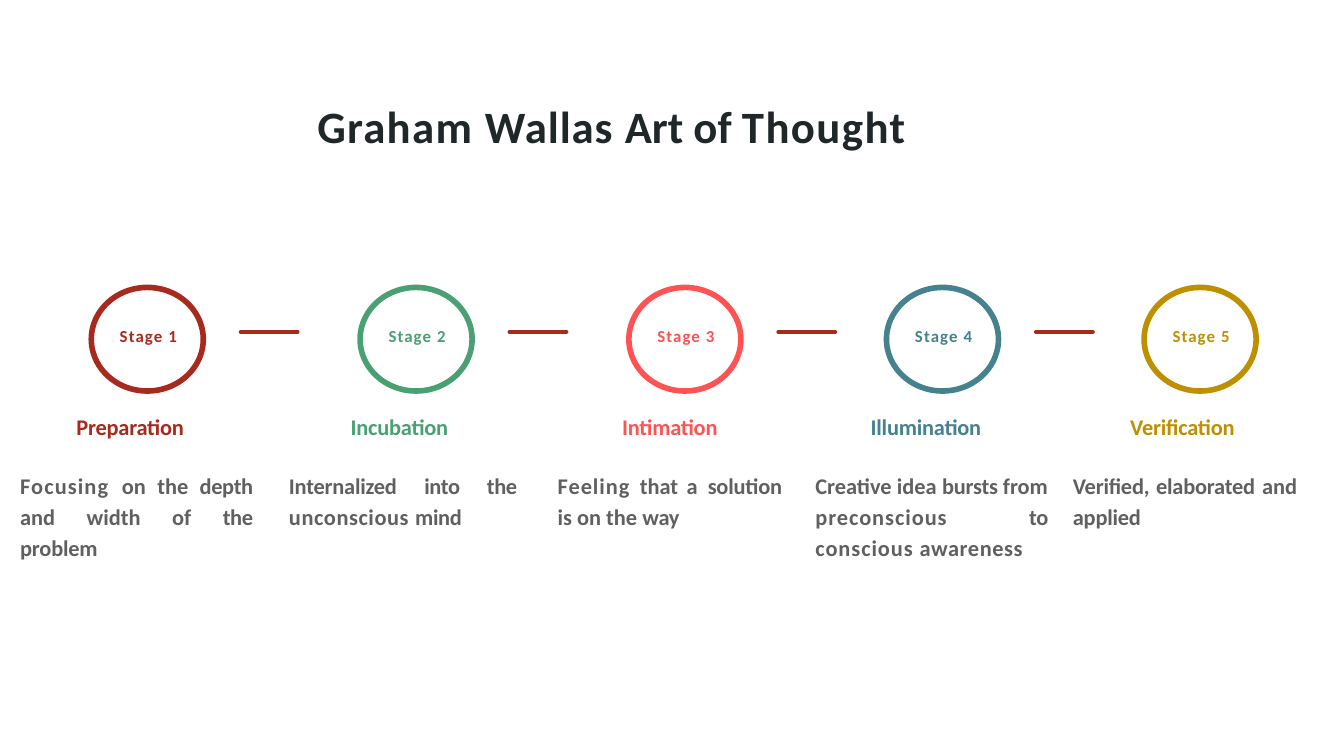
from itertools import accumulate

from lxml.etree import SubElement
from pptx import Presentation
from pptx.dml.color import RGBColor
from pptx.enum.shapes import MSO_CONNECTOR, MSO_SHAPE
from pptx.enum.text import MSO_ANCHOR, PP_ALIGN
from pptx.oxml.ns import qn
from pptx.util import Pt

FONT = "Calibri"
INK, GREY, RED = "1F2729", "606060", "A72A1E"

COLUMN_LEFTS = list(accumulate([9.4, 144, 144, 138, 138]))

# Each text is a list of (wording, letter spacing in points).
TITLE = [("Graham ", 0.7), ("Wallas ", 0.5), ("Art of ", 0), ("Thought", 0.8)]

# Colour, number spacing, name, name offset, description width, description
STAGES = [
    (RED, -0.5, "Preparation", 30.2, 126,
     [("Focusing ", 0.6), ("on the ", 0), ("depth ", -0.2),
      ("and width of ", 0), ("the ", -0.2), ("problem", -0.1)]),
    ("4AA073", 0.4, "Incubation", 33.1, 123.5,
     [("Internalized ", -0.1), ("into the ", -0.2),
      ("unconscious ", 0.3), ("mind", -0.2)]),
    ("FF5252", 0.2, "Intimation", 34.5, 121.5,
     [("Feeling ", 0.5), ("that ", 0), ("a ", 0.5), ("solution ", -0.1),
      ("is on the ", 0), ("way", -0.2)]),
    ("45818E", 0.3, "Illumination", 29.7, 126,
     [("Creative idea ", 0), ("bursts ", -0.1), ("from ", 0),
      ("preconscious ", 0.5), ("to ", -0.2), ("conscious", 0.5),
      (" awareness", 0.3)]),
    ("BE9000", 0.4, "Verification", 30.7, 121.5,
     [("Verified, elaborated ", -0.1), ("and ", 0), ("applied", -0.1)]),
]


def colour(value):
    return RGBColor.from_string(value)


def place(shape, left, top, width, height):
    shape.left, shape.top = Pt(left), Pt(top)
    shape.width, shape.height = Pt(width), Pt(height)


def write(box, spans, *, size, ink, align=PP_ALIGN.LEFT, line_spacing=None,
          inset_left=1.4, inset_top=1):
    frame = box.text_frame
    frame.word_wrap = True
    frame.vertical_anchor = MSO_ANCHOR.TOP
    frame.margin_left, frame.margin_top = Pt(inset_left), Pt(inset_top)
    frame.margin_right = frame.margin_bottom = 0
    para = frame.paragraphs[0]
    para.alignment = align
    para.space_before = Pt(1)
    if line_spacing:
        para.line_spacing = line_spacing
    for wording, spacing in spans:
        span = para.add_run()
        span.text = wording
        span.font.name = FONT
        span.font.size = Pt(size)
        span.font.bold = True
        span.font.color.rgb = colour(ink)
        span.font._element.set("spc", str(round(spacing * 100)))


def add_text(page, left, top, width, height, spans, **text_format):
    box = page.shapes.add_textbox(Pt(left), Pt(top), Pt(width), Pt(height))
    write(box, spans, **text_format)


def add_ring(page, left, ink):
    ring = page.shapes.add_shape(
        MSO_SHAPE.OVAL, Pt(left), Pt(154), Pt(60), Pt(55.5))
    ring.shadow.inherit = False
    ring.fill.background()
    ring.line.color.rgb = colour(ink)
    ring.line.width = Pt(3)


def add_dash(page, left):
    """Draw the short round-ended line between two stages."""
    dash = page.shapes.add_connector(
        MSO_CONNECTOR.STRAIGHT, Pt(left), Pt(177.8), Pt(left + 30.6), Pt(177.8))
    dash.line.color.rgb = colour(RED)
    dash.line.width = Pt(2)
    dash.line._get_or_add_ln().set("cap", "rnd")
    SubElement(dash._element.spPr, qn("a:effectLst"))


def add_stage(page, number, left, stage):
    ink, number_spacing, name, name_offset, width, description = stage
    add_ring(page, left + 39.5, ink)
    add_text(page, left + 53.4, 173.5, 33.5, 13,
             [("Stage ", 0.6), (str(number), number_spacing)],
             size=9, ink=ink)
    add_text(page, left + name_offset, 220.3, 66, 16.6, [(name, -0.1)],
             size=12, ink=ink)
    add_text(page, left, 249.8, width, 52, description,
             size=12, ink=GREY, align=PP_ALIGN.JUSTIFY, line_spacing=1.15)


def main():
    deck = Presentation()
    deck.slide_width, deck.slide_height = Pt(720), Pt(405)
    page = deck.slides.add_slide(deck.slide_layouts[5])

    title = page.shapes.title
    place(title, 82, 32.4, 556, 50.4)
    write(title, TITLE, size=24, ink=INK, inset_left=88, inset_top=20.2)

    for number, (left, stage) in enumerate(zip(COLUMN_LEFTS, STAGES), 1):
        add_stage(page, number, left, stage)
    for left in COLUMN_LEFTS[:-1]:
        add_dash(page, left + 119.5)

    deck.save("out.pptx")


if __name__ == "__main__":
    main()
